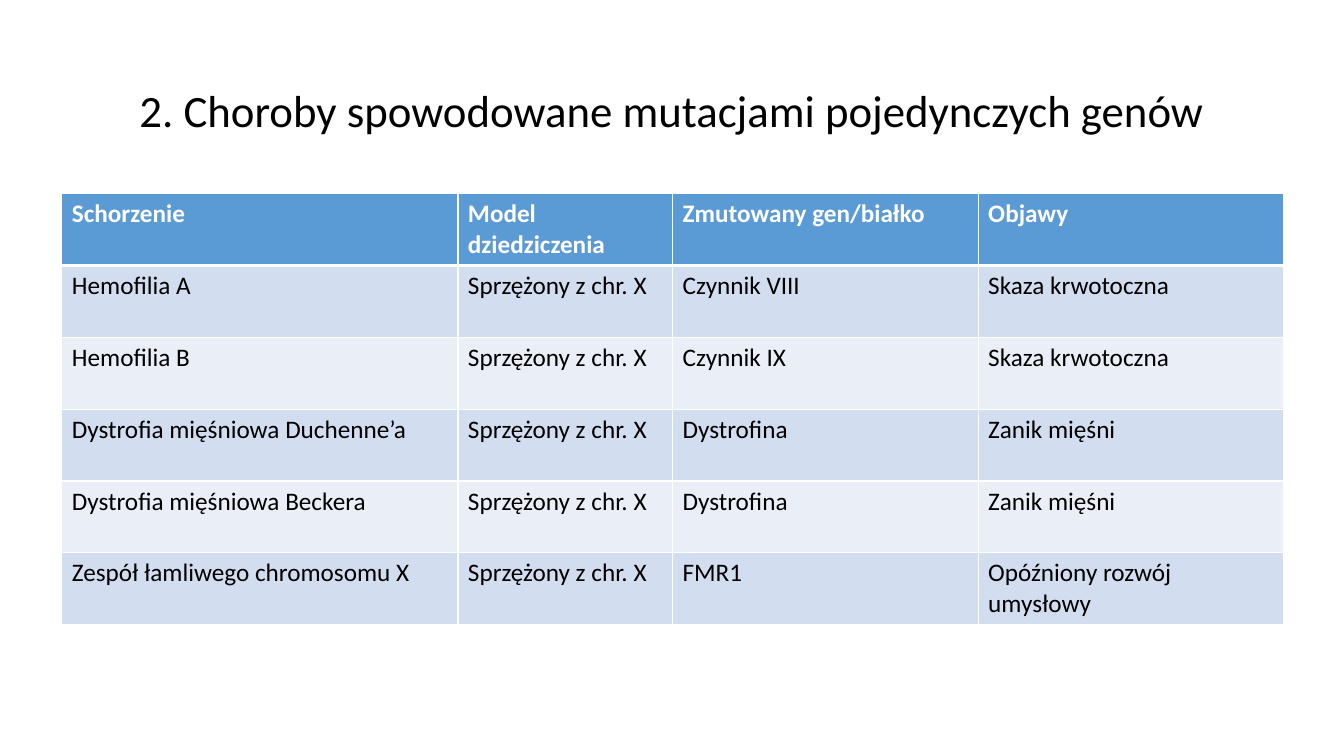
import pptx
import pptx.dml.color
import pptx.enum.text
import pptx.oxml
import pptx.oxml.ns
import pptx.util
from pptx.util import Cm

TITLE = "2. Choroby spowodowane mutacjami pojedynczych genów"
INHERITANCE = "Sprzężony z chr. X"
HEADER = ("Schorzenie", "Model dziedziczenia", "Zmutowany gen/białko", "Objawy")
DISEASES = [
    ("Hemofilia A", INHERITANCE, "Czynnik VIII", "Skaza krwotoczna"),
    ("Hemofilia B", INHERITANCE, "Czynnik IX", "Skaza krwotoczna"),
    ("Dystrofia mięśniowa Duchenne’a", INHERITANCE, "Dystrofina", "Zanik mięśni"),
    ("Dystrofia mięśniowa Beckera", INHERITANCE, "Dystrofina", "Zanik mięśni"),
    ("Zespół łamliwego chromosomu X", INHERITANCE, "FMR1", "Opóźniony rozwój umysłowy"),
]
COLUMN_WIDTHS = [9.98, 5.41, 7.7, 7.7]
ROW_HEIGHT = 1.81
FONT = "Calibri"
COLORS = {
    "black": "000000",
    "white": "FFFFFF",
    "header": "5B9BD5",
    "odd": "D2DEEF",
    "even": "EAEFF7",
}


def rgb(name):
    return pptx.dml.color.RGBColor.from_string(COLORS[name])


def write(frame, text, size, color, bold=False):
    para = frame.paragraphs[0]
    para.text = text
    para.font.name = FONT
    para.font.size = pptx.util.Pt(size)
    para.font.bold = bold
    para.font.color.rgb = rgb(color)
    return para


def add_border(cell, side, points):
    line = pptx.oxml.parse_xml(
        f'<a:{side} {pptx.oxml.ns.nsdecls("a")} w="{pptx.util.Pt(points)}">'
        f'<a:solidFill><a:srgbClr val="{COLORS["white"]}"/></a:solidFill></a:{side}>'
    )
    cell._tc.get_or_add_tcPr().append(line)


def add_title(page):
    box = page.shapes.add_textbox(Cm(2.33), Cm(1.01), Cm(29.21), Cm(3.68))
    frame = box.text_frame
    frame.word_wrap = True
    frame.vertical_anchor = pptx.enum.text.MSO_ANCHOR.MIDDLE
    para = write(frame, TITLE, 32, "black")
    para.alignment = pptx.enum.text.PP_ALIGN.CENTER
    para.line_spacing = 0.9


def add_disease_table(page):
    rows = [HEADER] + DISEASES
    table = page.shapes.add_table(
        len(rows), len(HEADER), Cm(1.56), Cm(4.88),
        Cm(sum(COLUMN_WIDTHS)), Cm(ROW_HEIGHT * len(rows)),
    ).table
    for column, width in zip(table.columns, COLUMN_WIDTHS):
        column.width = Cm(width)

    for r, texts in enumerate(rows):
        table.rows[r].height = Cm(ROW_HEIGHT)
        is_header = r == 0
        fill = "header" if is_header else ("odd" if r % 2 else "even")
        for c, text in enumerate(texts):
            cell = table.cell(r, c)
            write(cell.text_frame, text, 18, "white" if is_header else "black", is_header)
            # White rules, thicker on both sides of the header's lower edge
            for side in ("lnL", "lnR", "lnT", "lnB"):
                thick = (r, side) in ((0, "lnB"), (1, "lnT"))
                add_border(cell, side, 3 if thick else 1)
            cell.fill.solid()
            cell.fill.fore_color.rgb = rgb(fill)


def main():
    deck = pptx.Presentation()
    deck.slide_width, deck.slide_height = Cm(33.87), Cm(19.05)
    page = deck.slides.add_slide(deck.slide_layouts[6])
    add_title(page)
    add_disease_table(page)
    deck.save("out.pptx")


if __name__ == "__main__":
    main()
